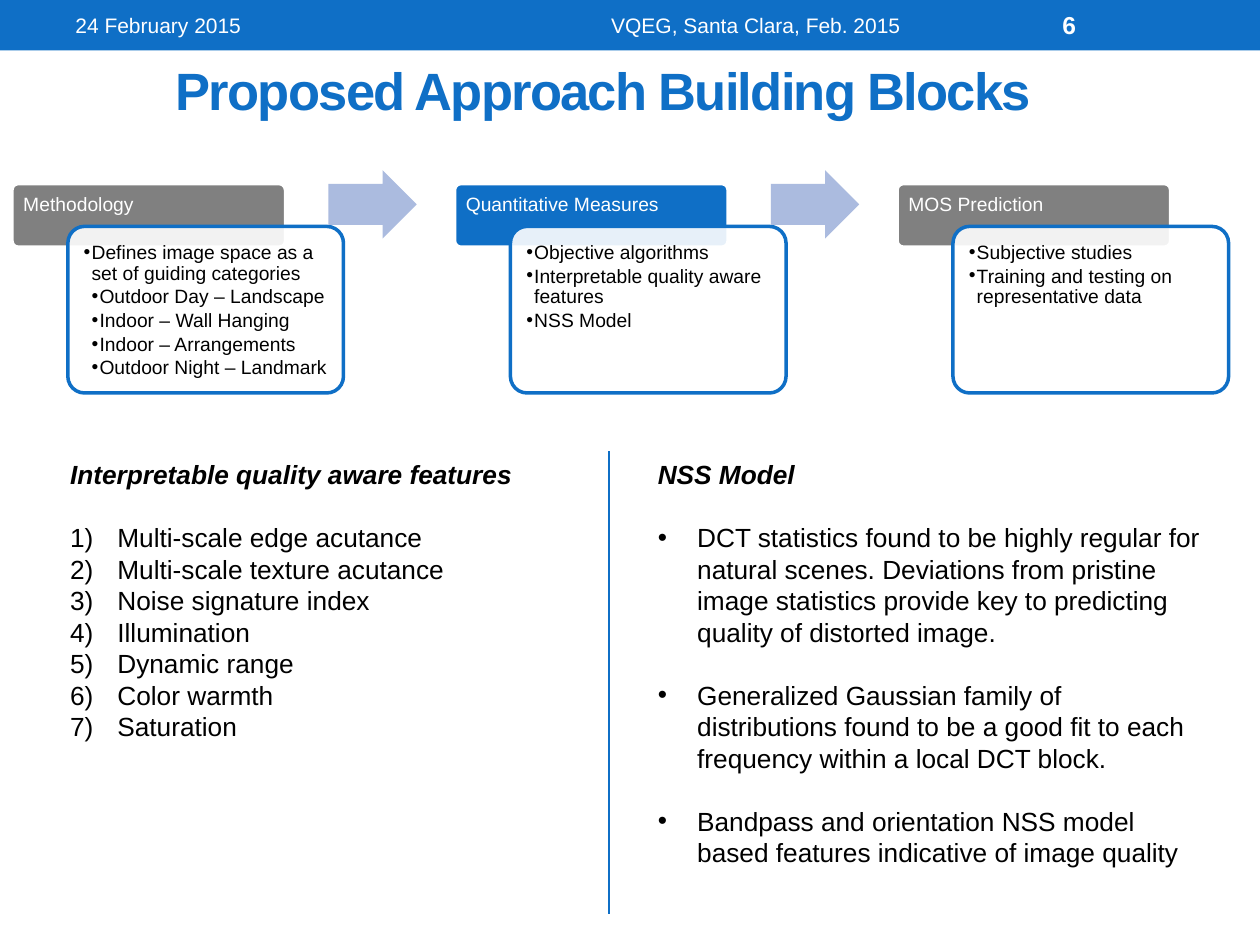
"""Build the slide on the building blocks of the proposed approach."""
from lxml import etree
from pptx import Presentation
from pptx.dml.color import RGBColor
from pptx.enum.shapes import MSO_CONNECTOR, MSO_SHAPE
from pptx.enum.text import MSO_ANCHOR, PP_ALIGN
from pptx.oxml.ns import qn
from pptx.util import Pt

TOP, MIDDLE = MSO_ANCHOR.TOP, MSO_ANCHOR.MIDDLE
LEFT, CENTER = PP_ALIGN.LEFT, PP_ALIGN.CENTER
RECT, ROUNDED, ARROW = MSO_SHAPE.RECTANGLE, MSO_SHAPE.ROUNDED_RECTANGLE, MSO_SHAPE.RIGHT_ARROW
STRAIGHT = MSO_CONNECTOR.STRAIGHT
BLUE, GRAY, PALE, WHITE, BLACK = "0F6FC6", "808080", "ABBBDF", "FFFFFF", "000000"

prs = Presentation()
prs.slide_width, prs.slide_height = Pt(720), Pt(540)
slide = prs.slides.add_slide(prs.slide_layouts[5])
shapes = slide.shapes


def paint(kind, left, top, width, height, fill, line=None):
    """Add a filled preset shape with an optional outline."""
    shape = shapes.add_shape(kind, Pt(left), Pt(top), Pt(width), Pt(height))
    shape.shadow.inherit = False
    shape.fill.solid()
    shape.fill.fore_color.rgb = RGBColor.from_string(fill)
    if line:
        shape.line.color.rgb = RGBColor.from_string(line)
        shape.line.width = Pt(2)
    else:
        shape.line.fill.background()
    return shape


def write(holder, text, size, color=BLACK, bold=False, italic=False, align=LEFT, anchor=TOP,
          inset=None, spacing=None, after=0, bullet=None, margin=0, hang=0, track=None):
    """Add one formatted paragraph to a text holder."""
    frame = holder.text_frame
    frame.word_wrap = True
    frame.vertical_anchor = anchor
    if inset is not None:
        frame.margin_left = frame.margin_right = frame.margin_top = frame.margin_bottom = Pt(inset)
    paragraph = frame.add_paragraph() if frame.text else frame.paragraphs[0]
    paragraph.alignment = align
    paragraph.space_before, paragraph.space_after = Pt(0), Pt(after)
    if spacing:
        paragraph.line_spacing = Pt(spacing)
    if bullet:
        properties = paragraph._p.get_or_add_pPr()
        properties.set("marL", str(Pt(margin)))
        properties.set("indent", str(Pt(-hang)))
        if bullet == "1)":
            etree.SubElement(properties, qn("a:buAutoNum"), type="arabicParenR")
        else:
            etree.SubElement(properties, qn("a:buFont"), typeface="Arial")
            etree.SubElement(properties, qn("a:buChar"), char=bullet)
    run = paragraph.add_run()
    run.text = text
    run.font.name, run.font.size = "Arial", Pt(size)
    run.font.bold, run.font.italic = bold, italic
    run.font.color.rgb = RGBColor.from_string(color)
    if track:
        run._r.get_or_add_rPr().set("spc", str(track))


paint(RECT, 0, 0, 720, 28.8, BLUE)
for text, left, width, size, bold, align in [
    ("24 February 2015", 36, 228, 12, False, LEFT),
    ("VQEG, Santa Clara, Feb. 2015", 270, 324, 12, False, CENTER),
    ("6", 600, 84, 14, True, LEFT),
]:
    banner_text = shapes.add_textbox(Pt(left), Pt(1.44), Pt(width), Pt(25.92))
    write(banner_text, text, size, WHITE, bold=bold, align=align, anchor=MIDDLE)

title = shapes.title
title.left, title.top, title.width, title.height = Pt(5.76), Pt(12.24), Pt(678.24), Pt(77.76)
write(title, "Proposed Approach Building Blocks", 30, BLUE, bold=True, align=CENTER,
      anchor=MIDDLE, track=-100)

stages = [
    ("Methodology", GRAY, [
        (1, "Defines image space as a set of guiding categories"),
        (2, "Outdoor Day – Landscape"),
        (2, "Indoor – Wall Hanging"),
        (2, "Indoor – Arrangements"),
        (2, "Outdoor Night – Landmark"),
    ]),
    ("Quantitative Measures", BLUE, [
        (1, "Objective algorithms"),
        (1, "Interpretable quality aware features"),
        (1, "NSS Model"),
    ]),
    ("MOS Prediction", GRAY, [
        (1, "Subjective studies"),
        (1, "Training and testing on representative data"),
    ]),
]
for index, (name, color, points) in enumerate(stages):
    left = 6.8 + 252.9 * index
    header = paint(ROUNDED, left, 104.9, 156.4, 36.4, color, WHITE)
    header.adjustments[0] = 0.1
    write(header, name, 11, WHITE, inset=5.4, spacing=12)

    details = paint(ROUNDED, left + 32, 129.4, 157.5, 95.2, WHITE, BLUE)
    details.adjustments[0] = 0.1
    fill_color = details._element.spPr.find(qn("a:solidFill"))[0]
    etree.SubElement(fill_color, qn("a:alpha"), val="90000")
    for level, point in points:
        write(details, point, 11, inset=6.3, spacing=12, after=1.5,
              bullet="•", margin=4.5 * level, hang=4.5)

    if index < len(stages) - 1:
        arrow = paint(ARROW, left + 180.9, 97.3, 50.4, 39, PALE)
        arrow.adjustments[0] = 0.6

columns = [
    ("Interpretable quality aware features", 33, 294, "1)", 27, 0, [
        "Multi-scale edge acutance",
        "Multi-scale texture acutance",
        "Noise signature index",
        "Illumination",
        "Dynamic range",
        "Color warmth",
        "Saturation",
    ]),
    ("NSS Model", 368.8, 324.7, "•", 22.5, 18, [
        "DCT statistics found to be highly regular for natural scenes. Deviations from pristine "
        "image statistics provide key to predicting quality of distorted image.",
        "Generalized Gaussian family of distributions found to be a good fit to each frequency "
        "within a local DCT block.",
        "Bandpass and orientation NSS model based features indicative of image quality",
    ]),
]
for heading, left, width, bullet, indent, gap, items in columns:
    column = shapes.add_textbox(Pt(left), Pt(258.5), Pt(width), Pt(252))
    write(column, heading, 15, bold=True, italic=True, spacing=18, after=18)
    for item in items:
        write(column, item, 15, spacing=18, after=gap, bullet=bullet, margin=indent, hang=indent)

divider = shapes.add_connector(STRAIGHT, Pt(348), Pt(257.8), Pt(348), Pt(522))
divider.line.color.rgb = RGBColor.from_string(BLUE)
divider.line.width = Pt(1.5)
etree.SubElement(divider._element.spPr, qn("a:effectLst"))

prs.save("out.pptx")
